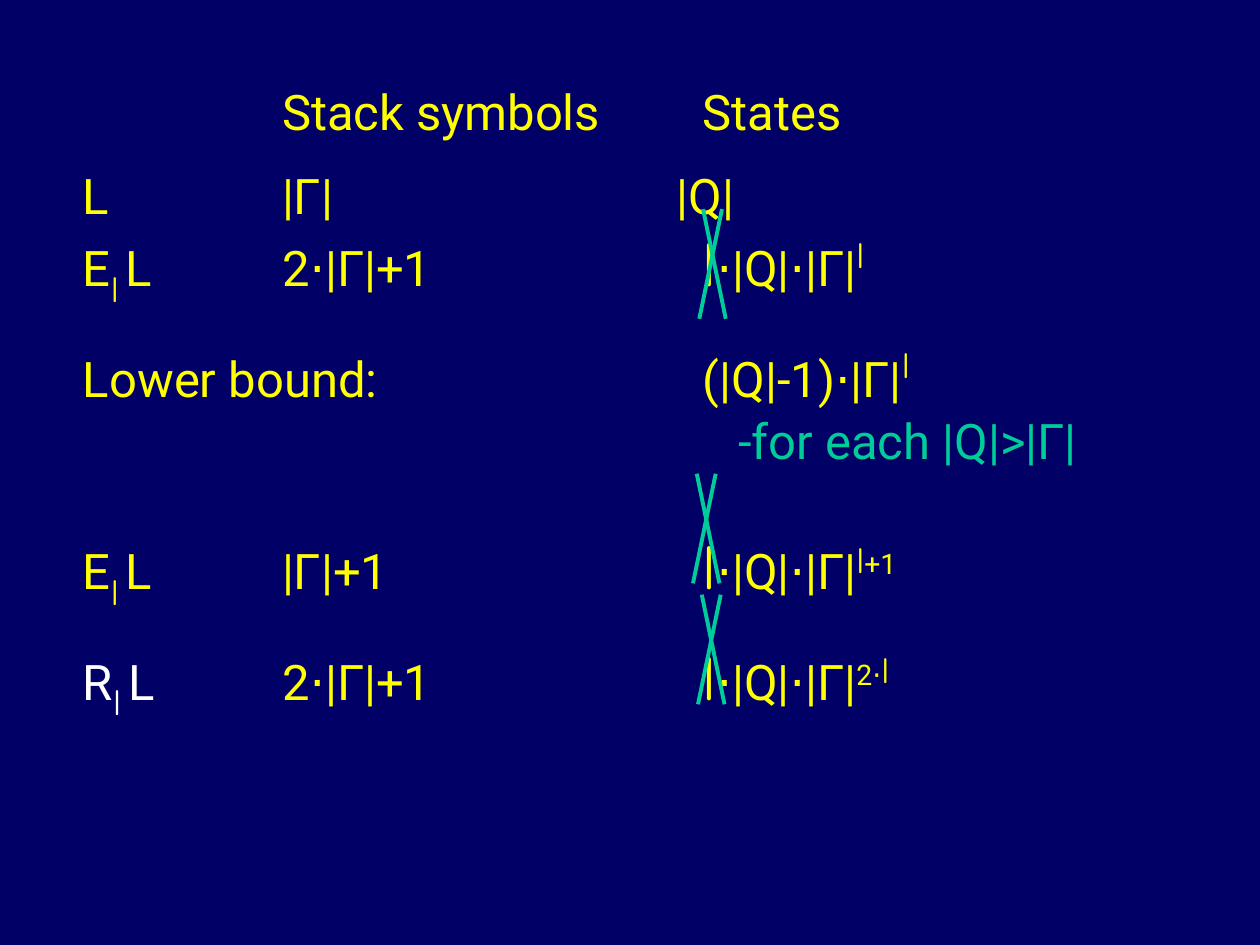
from typing import NamedTuple

from lxml import etree
from pptx import Presentation
from pptx.dml.color import RGBColor
from pptx.enum import shapes, text
from pptx.oxml import ns
from pptx.util import Inches, Pt

NAVY = RGBColor(0x00, 0x00, 0x66)
YELLOW = RGBColor(0xFF, 0xFF, 0x00)
WHITE = RGBColor(0xFF, 0xFF, 0xFF)
GREEN = RGBColor(0x00, 0xCC, 0x99)

NAME, STACK, STATE = 0.29, 1.87, 5.21


class Run(NamedTuple):
    text: str
    color: RGBColor = YELLOW
    size: int = 28
    font: str = "Roboto"
    base: int = 0


class Row(NamedTuple):
    runs: list[Run]
    gap: int = 0
    stops: tuple[float, ...] = (NAME, STACK, STATE)


class Cross(NamedTuple):
    left: float
    top: float


def ell(base: int = 0, color: RGBColor = YELLOW) -> Run:
    return Run("l", color, 36, "Comic Neue", base)


def bound(name: str, stack: str, power: list[Run],
          color: RGBColor = YELLOW) -> list[Run]:
    return [Run(f"\t{name}", color), ell(-25, color), Run(" ", color, base=-25),
            Run("L", color), Run(f"\t{stack}\t"), ell(), Run("⋅|Q|⋅|Γ|"), *power]


ROWS = [
    Row([Run("\t\tStack symbols\tStates")]),
    Row([Run("\tL\t|Γ|\t|Q|")], 14, (NAME, STACK, 5.0)),
    Row(bound("E", "2⋅|Γ|+1", [ell(30)])),
    Row([Run("\tLower bound:\t(|Q|-1)⋅|Γ|"), ell(30)], 14),
    Row([Run("\t-for each |Q|>|Γ|", GREEN)], 0, (5.49,)),
    Row(bound("E", "|Γ|+1", [ell(26), Run("+1", base=30)]), 33),
    Row(bound("R", "2⋅|Γ|+1", [Run("2⋅", base=30), ell(26)], WHITE), 14),
]
MARKS = [Cross(5.55, 1.66), Cross(5.54, 4.72), Cross(5.5, 3.76)]


def write(para, words: str, *, color: RGBColor, size: int, font: str,
          base: int) -> None:
    run = para.add_run()
    run.text = words
    run.font.size = Pt(size)
    run.font.name = font
    run.font.color.rgb = color
    if base:
        run._r.get_or_add_rPr().set("baseline", str(base * 1000))


def set_tabs(para, stops: tuple[float, ...]) -> None:
    tabs = etree.SubElement(para._p.get_or_add_pPr(), ns.qn("a:tabLst"))
    for stop in stops:
        etree.SubElement(tabs, ns.qn("a:tab"), pos=str(Inches(stop)), algn="l")


def draw_rows(slide, rows: list[Row]) -> None:
    box = slide.shapes.add_textbox(Inches(0.27), Inches(0.6),
                                   Inches(9.45), Inches(4.88))
    frame = box.text_frame
    frame.word_wrap = True
    frame.auto_size = text.MSO_AUTO_SIZE.SHAPE_TO_FIT_TEXT
    for i, row in enumerate(rows):
        para = frame.add_paragraph() if i else frame.paragraphs[0]
        para.space_before = Pt(row.gap)
        set_tabs(para, row.stops)
        for run in row.runs:
            write(para, run.text, color=run.color, size=run.size,
                  font=run.font, base=run.base)


def draw_cross(slide, mark: Cross) -> None:
    group = slide.shapes.add_group_shape()
    for start, end in ((0.18, 0), (0.03, 0.21)):
        line = group.shapes.add_connector(
            shapes.MSO_CONNECTOR.STRAIGHT,
            Inches(mark.left + start), Inches(mark.top),
            Inches(mark.left + end), Inches(mark.top + 0.87))
        line.line.color.rgb = GREEN
        line.line.width = Pt(2.25)
        etree.SubElement(line._element.spPr, ns.qn("a:effectLst"))


def main() -> None:
    deck = Presentation()
    deck.slide_width, deck.slide_height = Inches(10), Inches(7.5)
    slide = deck.slides.add_slide(deck.slide_layouts[6])
    slide.background.fill.solid()
    slide.background.fill.fore_color.rgb = NAVY
    draw_rows(slide, ROWS)
    for mark in MARKS:
        draw_cross(slide, mark)
    deck.save("out.pptx")


if __name__ == "__main__":
    main()
